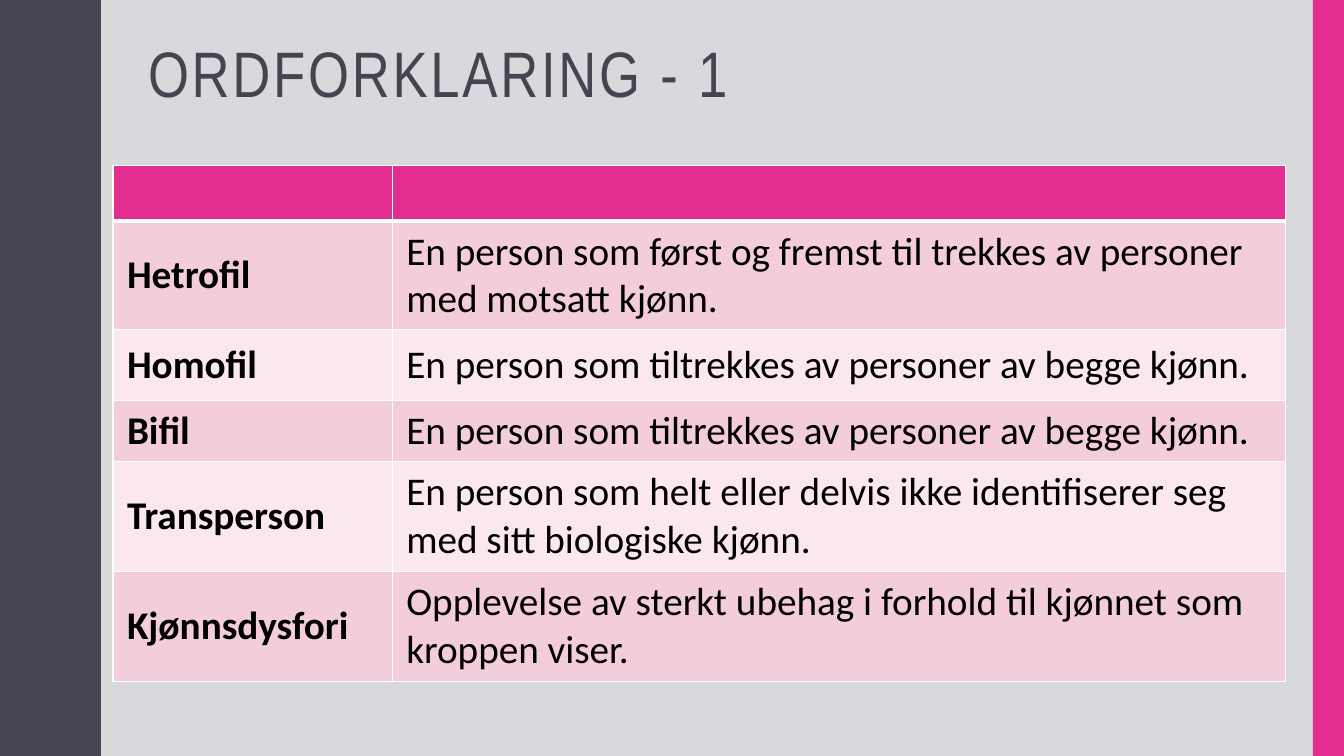
from lxml import etree
from pptx import Presentation
from pptx.dml.color import RGBColor
from pptx.enum.shapes import MSO_SHAPE
from pptx.enum.text import MSO_ANCHOR
from pptx.oxml.ns import qn
from pptx.util import Inches, Pt

RECT = MSO_SHAPE.RECTANGLE
MIDDLE = MSO_ANCHOR.MIDDLE
DARK, PINK, WHITE = "454551", "E32D91", "FFFFFF"
BANDS = ["F4CDDC", "FAE8EE"]


def paint(fill, color):
    fill.solid()
    fill.fore_color.rgb = RGBColor.from_string(color)


def write(tf, text, font="Calibri", size=28, color="000000", bold=False, line=None, spacing=None):
    p = tf.paragraphs[0]
    p.line_spacing = line
    r = p.add_run()
    r.text = text
    r.font.name = font
    r.font.size = Pt(size)
    r.font.bold = bold
    r.font.color.rgb = RGBColor.from_string(color)
    if spacing:
        r.font._element.set("spc", str(spacing * 100))


prs = Presentation()
prs.slide_width = Inches(13.33)
prs.slide_height = Inches(7.5)
s = prs.slides.add_slide(prs.slide_layouts[6])
paint(s.background.fill, "D8D9DC")

half_wave = [(0.78, 0), (0.78, 0.07), (0.79, 0.14), (0.8, 0.2), (0.81, 0.25), (0.83, 0.29),
             (0.85, 0.33), (0.87, 0.38), (0.89, 0.42), (0.91, 0.46), (0.93, 0.5),
             (0.95, 0.55), (0.96, 0.61), (0.97, 0.68), (0.97, 0.75)]
wave = half_wave + [(x, 1.5 - y) for x, y in reversed(half_wave[1:-1])]
edge = [(x, y + 1.5 * i) for i in range(5) for x, y in wave]
points = edge + [(0.78, 7.5), (0, 7.5)]
fb = s.shapes.build_freeform(0, 0, scale=Inches(1))
fb.add_line_segments(points, close=True)
wavy_side = fb.convert_to_shape()
right_bar = s.shapes.add_shape(RECT, Inches(13.02), 0, Inches(0.31), Inches(7.5))
for sp, color in [(wavy_side, DARK), (right_bar, PINK)]:
    sp.shadow.inherit = False
    paint(sp.fill, color)
    sp.line.fill.background()

title = s.shapes.add_textbox(Inches(1.37), Inches(0.42), Inches(11.13), Inches(0.68))
tf = title.text_frame
tf.word_wrap = True
tf.vertical_anchor = MIDDLE
write(tf, "ORDFORKLARING - 1", font="Arial Narrow", size=45.9, color=DARK, line=0.9, spacing=2)

rows = [
    (0.55, "", ""),
    (1.08, "Hetrofil", "En person som først og fremst til trekkes av personer med motsatt kjønn."),
    (0.7, "Homofil", "En person som tiltrekkes av personer av begge kjønn."),
    (0.61, "Bifil", "En person som tiltrekkes av personer av begge kjønn."),
    (1.09, "Transperson", "En person som helt eller delvis ikke identifiserer seg med sitt biologiske kjønn."),
    (1.09, "Kjønnsdysfori", "Opplevelse av sterkt ubehag i forhold til kjønnet som kroppen viser."),
]
height = sum(row[0] for row in rows)
table = s.shapes.add_table(len(rows), 2, Inches(1.12), Inches(1.64), Inches(11.63), Inches(height)).table
table.columns[0].width = Inches(2.77)
table.columns[1].width = Inches(8.86)

for i, (row_height, *texts) in enumerate(rows):
    table.rows[i].height = Inches(row_height)
    for j, text in enumerate(texts):
        cell = table.cell(i, j)
        cell.vertical_anchor = MIDDLE
        cell.margin_left = cell.margin_right = Inches(0.14)
        cell.margin_top = cell.margin_bottom = Inches(0.07)
        tcPr = cell._tc.get_or_add_tcPr()
        for side in "LRTB":
            heavy = (i, side) in [(0, "B"), (1, "T")]
            ln = etree.SubElement(tcPr, qn(f"a:ln{side}"), w=str(Pt(3 if heavy else 1)))
            solid = etree.SubElement(ln, qn("a:solidFill"))
            etree.SubElement(solid, qn("a:srgbClr"), val=WHITE)
        paint(cell.fill, BANDS[(i - 1) % 2] if i else PINK)
        if text:
            write(cell.text_frame, text, bold=j == 0)

prs.save("out.pptx")
